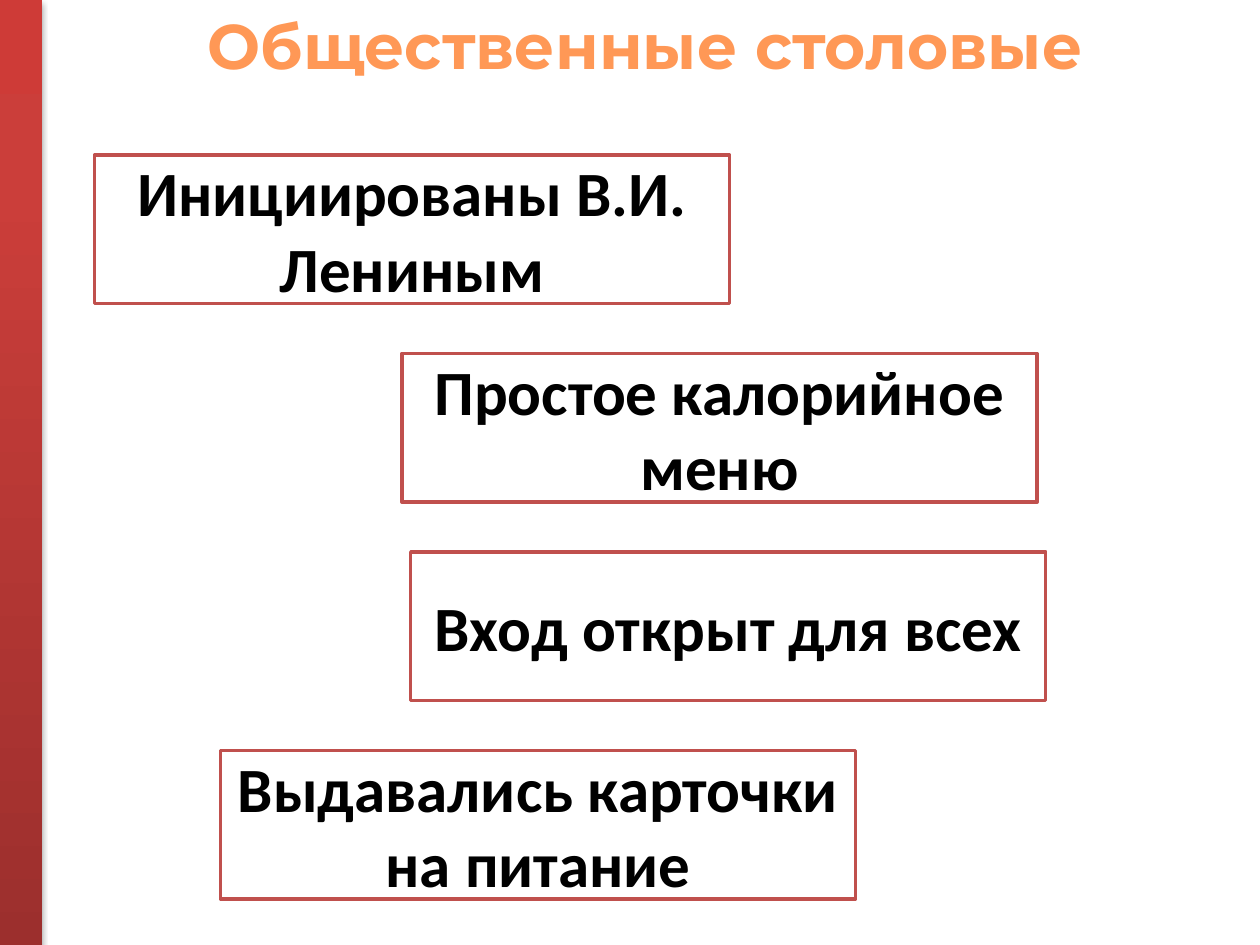
from copy import deepcopy
from dataclasses import dataclass

from lxml import etree
from pptx import Presentation
from pptx.dml.color import RGBColor
from pptx.enum import shapes, text
from pptx.oxml.ns import qn
from pptx.util import Inches, Pt

W, H = 10, 7.5


@dataclass(frozen=True)
class Theme:
    title: str = "FF9856"
    ink: str = "000000"
    paper: str = "FFFFFF"
    border: str = "C0504D"
    bar: tuple = ((0, "9C2F2D"), (0.8, "CB3E3A"), (1, "CE3B37"))
    shadow: str = "000000"
    title_font: str = "Montserrat"
    body_font: str = "Calibri"
    size: int = 36
    border_width: int = 2


THEME = Theme()
CARDS = (
    (0.75, "Инициированы В.И. Лениным"),
    (3.19, "Простое калорийное меню"),
    (3.26, "Вход открыт для всех"),
    (1.75, "Выдавались карточки на питание"),
)


def rgb(value):
    return RGBColor.from_string(value)


def place(box):
    return [Inches(v) for v in box]


def write(sp, content, font=THEME.body_font, color=THEME.ink, wrap=True,
          anchor=text.MSO_ANCHOR.MIDDLE, fit=text.MSO_AUTO_SIZE.NONE):
    tf = sp.text_frame
    tf.auto_size = fit
    tf.word_wrap = wrap
    tf.vertical_anchor = anchor
    p = tf.paragraphs[0]
    p.alignment = text.PP_ALIGN.CENTER
    r = p.add_run()
    r.text = content
    r.font.name = font
    r.font.size = Pt(THEME.size)
    r.font.bold = True
    r.font.color.rgb = rgb(color)


def add_rect(slide, box):
    sp = slide.shapes.add_shape(shapes.MSO_SHAPE.RECTANGLE, *place(box))
    sp.shadow.inherit = False
    return sp


def add_shadow(sp):
    effects = sp._element.spPr.find(qn("a:effectLst"))
    outer = etree.SubElement(effects, qn("a:outerShdw"), blurRad=str(Pt(3.1)),
                             dist=str(Pt(1.8)), dir="5400000", rotWithShape="0")
    color = etree.SubElement(outer, qn("a:srgbClr"), val=THEME.shadow)
    etree.SubElement(color, qn("a:alpha"), val="35000")


def side_bar(slide, box):
    sp = add_rect(slide, box)
    sp.line.fill.background()
    sp.fill.gradient()
    sp.fill.gradient_angle = 90
    first = sp._element.spPr.find(".//" + qn("a:gs"))
    first.addnext(deepcopy(first))
    for stop, (position, color) in zip(sp.fill.gradient_stops, THEME.bar):
        stop.position = position
        stop.color.rgb = rgb(color)
    add_shadow(sp)


def heading(slide, box):
    sp = slide.shapes.add_textbox(*place(box))
    write(sp, "Общественные столовые", font=THEME.title_font,
          color=THEME.title, wrap=False, anchor=text.MSO_ANCHOR.TOP,
          fit=text.MSO_AUTO_SIZE.SHAPE_TO_FIT_TEXT)


def card_stack(slide, box, card_width):
    left, top, _, height = box
    row = height / len(CARDS)
    for i, (offset, content) in enumerate(CARDS):
        sp = add_rect(slide, (left + offset, top + i * row, card_width, row * 0.75))
        sp.fill.solid()
        sp.fill.fore_color.rgb = rgb(THEME.paper)
        sp.line.color.rgb = rgb(THEME.border)
        sp.line.width = Pt(THEME.border_width)
        write(sp, content)


def main():
    prs = Presentation()
    prs.slide_width, prs.slide_height = Inches(W), Inches(H)
    slide = prs.slides.add_slide(prs.slide_layouts[6])
    side_bar(slide, (0, 0, W / 30, H))
    heading(slide, (W * 0.14, 0, W * 0.744, 0.71))
    card_stack(slide, (0, 1.23, W, H * 0.84), W * 0.504)
    prs.save("out.pptx")


if __name__ == "__main__":
    main()
